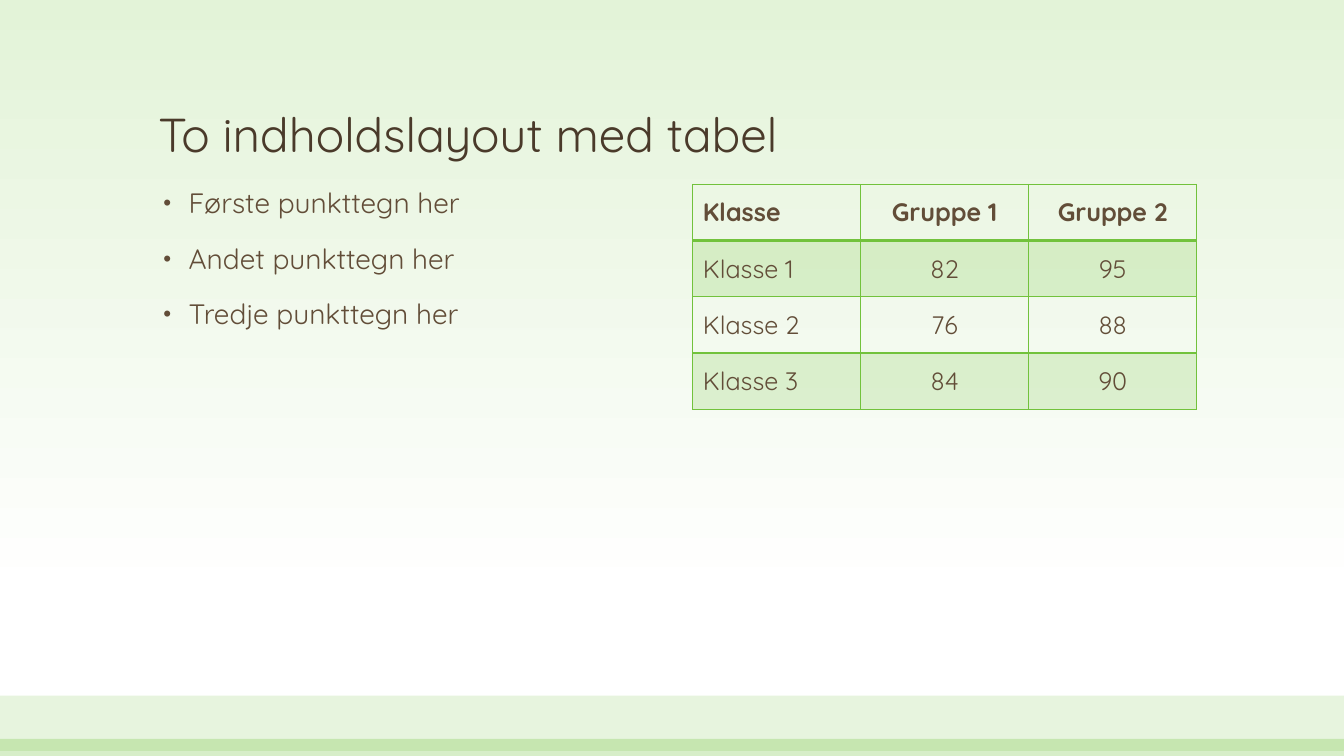
from lxml.etree import SubElement
from pptx import Presentation
from pptx.dml.color import RGBColor
from pptx.enum.shapes import MSO_SHAPE
from pptx.enum.text import MSO_ANCHOR, MSO_AUTO_SIZE, PP_ALIGN
from pptx.oxml.ns import qn
from pptx.util import Inches, Pt

SLIDE_WIDTH, SLIDE_HEIGHT = Inches(13.33), Inches(7.5)
LEFT_COLUMN, RIGHT_COLUMN = Inches(1.47), Inches(6.87)
COLUMN_WIDTH, CONTENT_TOP = Inches(5), Inches(1.83)

FONT = "Quicksand"
GREEN = RGBColor(0x72, 0xC2, 0x3C)
PALE_GREEN = RGBColor(0xE3, 0xF3, 0xD8)
WHITE = RGBColor(0xFF, 0xFF, 0xFF)
DARK_BROWN = RGBColor(0x4A, 0x3A, 0x2A)
BROWN = RGBColor(0x62, 0x4D, 0x38)

TITLE = "To indholdslayout med tabel"
BULLETS = ["Første punkttegn her", "Andet punkttegn her", "Tredje punkttegn her"]
CLASS_ROWS = [
    ["Klasse", "Gruppe 1", "Gruppe 2"],
    ["Klasse 1", "82", "95"],
    ["Klasse 2", "76", "88"],
    ["Klasse 3", "84", "90"],
]


def write_text(para, text, size, color=BROWN, bold=False,
               align=PP_ALIGN.LEFT, line_spacing=1.0, space_before=0):
    para.alignment = align
    para.line_spacing = line_spacing
    para.space_before = Pt(space_before)
    span = para.add_run()
    span.text = text
    span.font.name = FONT
    span.font.size = Pt(size)
    span.font.bold = bold
    span.font.color.rgb = color


def fill_translucent(fill, properties, color, opacity):
    fill.solid()
    fill.fore_color.rgb = color
    color_element = properties.find(qn("a:solidFill")).find(qn("a:srgbClr"))
    SubElement(color_element, qn("a:alpha"), val=str(opacity * 1000))


def place(shape, left, top, width, height):
    shape.left, shape.top, shape.width, shape.height = left, top, width, height


def paint_background(page):
    fill = page.background.fill
    fill.gradient()
    fill.gradient_angle = 270
    for stop, color, position in zip(fill.gradient_stops, (PALE_GREEN, WHITE), (0, 0.79)):
        stop.color.rgb = color
        stop.position = position


def add_band(page, top, height, opacity):
    band = page.shapes.add_shape(MSO_SHAPE.RECTANGLE, 0, Inches(top),
                                 SLIDE_WIDTH, Inches(height))
    band.shadow.inherit = False
    band.line.fill.background()
    fill_translucent(band.fill, band.element.spPr, GREEN, opacity)


def add_title(page):
    box = page.shapes.title
    place(box, LEFT_COLUMN, Inches(0.48), Inches(10.4), Inches(1.19))
    frame = box.text_frame
    frame.auto_size = MSO_AUTO_SIZE.NONE
    frame.vertical_anchor = MSO_ANCHOR.BOTTOM
    write_text(frame.paragraphs[0], TITLE, 34, color=DARK_BROWN, line_spacing=0.9)


def set_bullet(para):
    properties = para._p.get_or_add_pPr()
    properties.set("marL", str(Inches(0.3)))
    properties.set("indent", str(Inches(-0.25)))
    SubElement(properties, qn("a:buSzPct"), val="80000")
    SubElement(properties, qn("a:buFont"), typeface="Arial")
    SubElement(properties, qn("a:buChar"), char="•")


def add_bullets(page):
    box = page.placeholders[1]
    place(box, LEFT_COLUMN, CONTENT_TOP, COLUMN_WIDTH, Inches(4.75))
    frame = box.text_frame
    frame.auto_size = MSO_AUTO_SIZE.NONE
    for index, text in enumerate(BULLETS):
        para = frame.add_paragraph() if index else frame.paragraphs[0]
        set_bullet(para)
        write_text(para, text, 20, line_spacing=0.9, space_before=18 if index else 0)


def set_borders(cell, top, bottom):
    properties = cell._tc.get_or_add_tcPr()
    for side, width in (("lnL", 1), ("lnR", 1), ("lnT", top), ("lnB", bottom)):
        line = SubElement(properties, qn(f"a:{side}"), w=str(Pt(width)))
        SubElement(SubElement(line, qn("a:solidFill")), qn("a:srgbClr"), val=str(GREEN))


def add_class_table(page):
    row_count, column_count = len(CLASS_ROWS), len(CLASS_ROWS[0])
    table = page.shapes.add_table(row_count, column_count, RIGHT_COLUMN, CONTENT_TOP,
                                  COLUMN_WIDTH, Inches(2.23)).table
    table.first_row = table.horz_banding = False
    for row, values in enumerate(CLASS_ROWS):
        for column, value in enumerate(values):
            cell = table.cell(row, column)
            cell.vertical_anchor = MSO_ANCHOR.MIDDLE
            write_text(cell.text_frame.paragraphs[0], value, 18, bold=row == 0,
                       align=PP_ALIGN.CENTER if column else PP_ALIGN.LEFT)
            # The rule under the header is heavier
            set_borders(cell, top=2 if row == 1 else 1, bottom=2 if row == 0 else 1)
            if row % 2:
                fill_translucent(cell.fill, cell._tc.tcPr, GREEN, 20)
            else:
                cell.fill.background()


def main():
    deck = Presentation()
    deck.slide_width, deck.slide_height = SLIDE_WIDTH, SLIDE_HEIGHT
    page = deck.slides.add_slide(deck.slide_layouts[1])

    # Backdrop
    paint_background(page)
    add_band(page, top=6.9, height=0.55, opacity=17)
    add_band(page, top=7.33, height=0.17, opacity=28)

    # Content
    add_title(page)
    add_class_table(page)
    add_bullets(page)
    deck.save("out.pptx")


if __name__ == "__main__":
    main()
